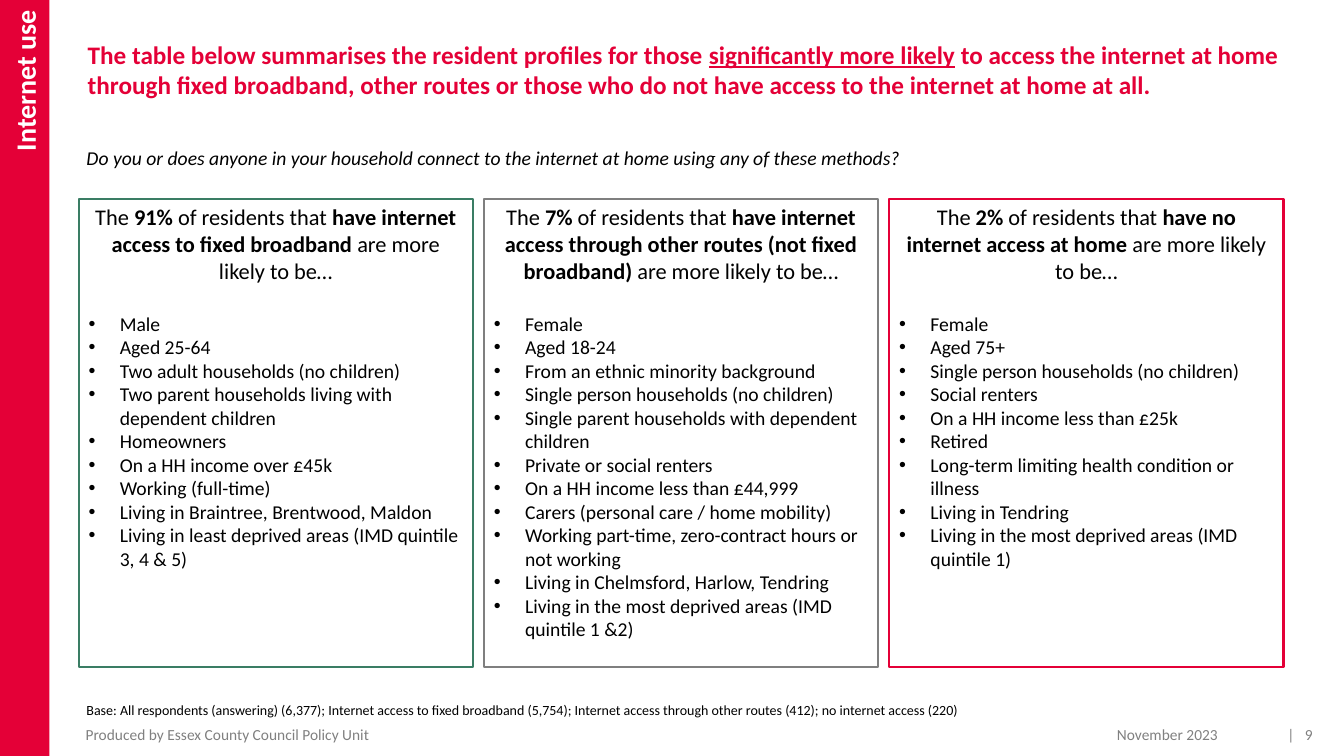
from dataclasses import dataclass

from lxml.etree import SubElement
from pptx import Presentation
from pptx.dml.color import RGBColor
from pptx.enum.shapes import MSO_SHAPE
from pptx.enum.text import MSO_ANCHOR, MSO_AUTO_SIZE, PP_ALIGN
from pptx.oxml.ns import qn
from pptx.util import Pt

EMU_PER_PX = 9144  # 100 px to the inch
SLIDE_WIDTH, SLIDE_HEIGHT = 1333, 750


@dataclass(frozen=True)
class Theme:
    font: str = "Calibri"
    red: str = "E40037"
    green: str = "3A7D64"
    card_grey: str = "7F7F7F"
    footer_grey: str = "808080"
    black: str = "000000"
    white: str = "FFFFFF"
    section_size: int = 20
    title_size: int = 18
    profile_size: int = 16
    body_size: int = 14
    footer_size: int = 11
    base_size: int = 10


THEME = Theme()

PROFILES = [
    (THEME.green, "91%", "have internet access to fixed broadband", [
        "Male",
        "Aged 25-64",
        "Two adult households (no children)",
        "Two parent households living with dependent children",
        "Homeowners",
        "On a HH income over £45k",
        "Working (full-time)",
        "Living in Braintree, Brentwood, Maldon",
        "Living in least deprived areas (IMD quintile 3, 4 & 5)",
    ]),
    (THEME.card_grey, "7%", "have internet access through other routes (not fixed broadband)", [
        "Female",
        "Aged 18-24",
        "From an ethnic minority background",
        "Single person households (no children)",
        "Single parent households with dependent children",
        "Private or social renters",
        "On a HH income less than £44,999",
        "Carers (personal care / home mobility)",
        "Working part-time, zero-contract hours or not working",
        "Living in Chelmsford, Harlow, Tendring",
        "Living in the most deprived areas (IMD quintile 1 &2)",
    ]),
    (THEME.red, "2%", "have no internet access at home", [
        "Female",
        "Aged 75+",
        "Single person households (no children)",
        "Social renters",
        "On a HH income less than £25k",
        "Retired",
        "Long-term limiting health condition or illness",
        "Living in Tendring",
        "Living in the most deprived areas (IMD quintile 1)",
    ]),
]


def px(length):
    return length * EMU_PER_PX


def apply(target, values):
    for name, value in values.items():
        setattr(target, name, value)


def set_frame(frame, insets=(10, 5, 10, 5), anchor=MSO_ANCHOR.TOP):
    """Insets run left, top, right, bottom."""
    sides = ("margin_left", "margin_top", "margin_right", "margin_bottom")
    apply(frame, {"word_wrap": True, "auto_size": MSO_AUTO_SIZE.NONE, "vertical_anchor": anchor,
                  **dict(zip(sides, map(px, insets)))})


def write(paragraph, runs, size, color=THEME.black, align=PP_ALIGN.LEFT):
    """Add runs given as (text, font values)."""
    paragraph.alignment = align
    for text, emphasis in runs:
        run = paragraph.add_run()
        run.text = text
        apply(run.font, {"name": THEME.font, "size": Pt(size), **emphasis})
        run.font.color.rgb = RGBColor.from_string(color)


def add_bullet(paragraph, indent):
    properties = paragraph._p.get_or_add_pPr()
    properties.set("marL", str(px(indent)))
    properties.set("indent", str(-px(indent)))
    SubElement(properties, qn("a:buFont")).set("typeface", "Arial")
    SubElement(properties, qn("a:buChar")).set("char", "•")


def add_rectangle(slide, box):
    rectangle = slide.shapes.add_shape(MSO_SHAPE.RECTANGLE, *map(px, box))
    rectangle.shadow.inherit = False
    return rectangle


def add_label(slide, box, runs, size, color=THEME.black, align=PP_ALIGN.LEFT, **frame_values):
    label = slide.shapes.add_textbox(*map(px, box))
    set_frame(label.text_frame, **frame_values)
    write(label.text_frame.paragraphs[0], runs, size, color, align)
    return label


def place_title(slide, box):
    title = slide.shapes.title
    apply(title, dict(zip(("left", "top", "width", "height"), map(px, box))))
    set_frame(title.text_frame, insets=(10, 5, 10, 0))
    write(title.text_frame.paragraphs[0], [
        ("The table below summarises the resident profiles for those ", {"bold": True}),
        ("significantly more likely", {"bold": True, "underline": True}),
        (" to access the internet at home through fixed broadband, other routes or those "
         "who do not have access to the internet at home at all.", {"bold": True}),
    ], THEME.title_size, THEME.red)


def add_section_band(slide, box):
    band = add_rectangle(slide, box)
    band.fill.solid()
    band.fill.fore_color.rgb = RGBColor.from_string(THEME.red)
    band.line.fill.background()
    frame = band.text_frame
    set_frame(frame, insets=(10, 10, 10, 5), anchor=MSO_ANCHOR.MIDDLE)
    frame._txBody.bodyPr.set("vert", "vert270")
    write(frame.paragraphs[0], [("Internet use", {"bold": True})],
          THEME.section_size, THEME.white, PP_ALIGN.RIGHT)


def add_profile_card(slide, box, color, share, access, traits):
    card = add_rectangle(slide, box)
    card.fill.background()
    card.line.color.rgb = RGBColor.from_string(color)
    card.line.width = Pt(1.5)
    frame = card.text_frame
    set_frame(frame)
    heading = frame.paragraphs[0]
    write(heading, [
        ("The ", {}),
        (f"{share} ", {"bold": True}),
        ("of residents that ", {}),
        (access, {"bold": True}),
        (" are more likely to be…", {}),
    ], THEME.profile_size, align=PP_ALIGN.CENTER)
    heading.space_after = Pt(19.5)
    for trait in traits:
        paragraph = frame.add_paragraph()
        write(paragraph, [(trait, {})], THEME.body_size)
        add_bullet(paragraph, 31)


def add_profiles(slide, box):
    left, top, width, height = box
    gap = 11
    card_width = (width - gap * (len(PROFILES) - 1)) // len(PROFILES)
    for column, profile in enumerate(PROFILES):
        card_left = left + column * (card_width + gap)
        add_profile_card(slide, (card_left, top, card_width, height), *profile)


def add_footer(slide, box):
    left, top, width, height = box
    right = left + width
    style = {"size": THEME.footer_size, "color": THEME.footer_grey, "anchor": MSO_ANCHOR.MIDDLE}
    add_label(slide, (left, top, 654, height),
              [("Produced by Essex County Council Policy Unit", {})], insets=(9, 5, 10, 5), **style)
    style.update(align=PP_ALIGN.RIGHT, insets=(10, 5, 0, 5))
    add_label(slide, (right - 334, top, 240, height), [("November 2023", {})], **style)
    page = add_label(slide, (right - 85, top, 85, height),
                     [("|", {}), (" ", {}), ("9", {})], **style)
    spacer = page.text_frame.paragraphs[0].runs[1]
    spacer.font._element.set("spc", "500")


def build_profiles_slide(presentation):
    slide = presentation.slides.add_slide(presentation.slide_layouts[5])
    place_title(slide, (77, 34, 1225, 118))
    add_section_band(slide, (0, 0, 49, SLIDE_HEIGHT))
    add_label(slide, (76, 140, 1077, 34), [
        ("Do you or does anyone in your household connect to the internet at home "
         "using any of these methods?", {"italic": True})], THEME.body_size)
    add_profiles(slide, (78, 197, 1195, 465))
    add_label(slide, (76, 691, 1057, 27), [
        ("Base: All respondents (answering) (6,377); Internet access to fixed broadband (5,754); "
         "Internet access through other routes (412); no internet access (220)", {})],
        THEME.base_size)
    add_footer(slide, (76, 721, 1226, 15))


def main():
    presentation = Presentation()
    apply(presentation, {"slide_width": px(SLIDE_WIDTH), "slide_height": px(SLIDE_HEIGHT)})
    build_profiles_slide(presentation)
    presentation.save("out.pptx")


if __name__ == "__main__":
    main()
